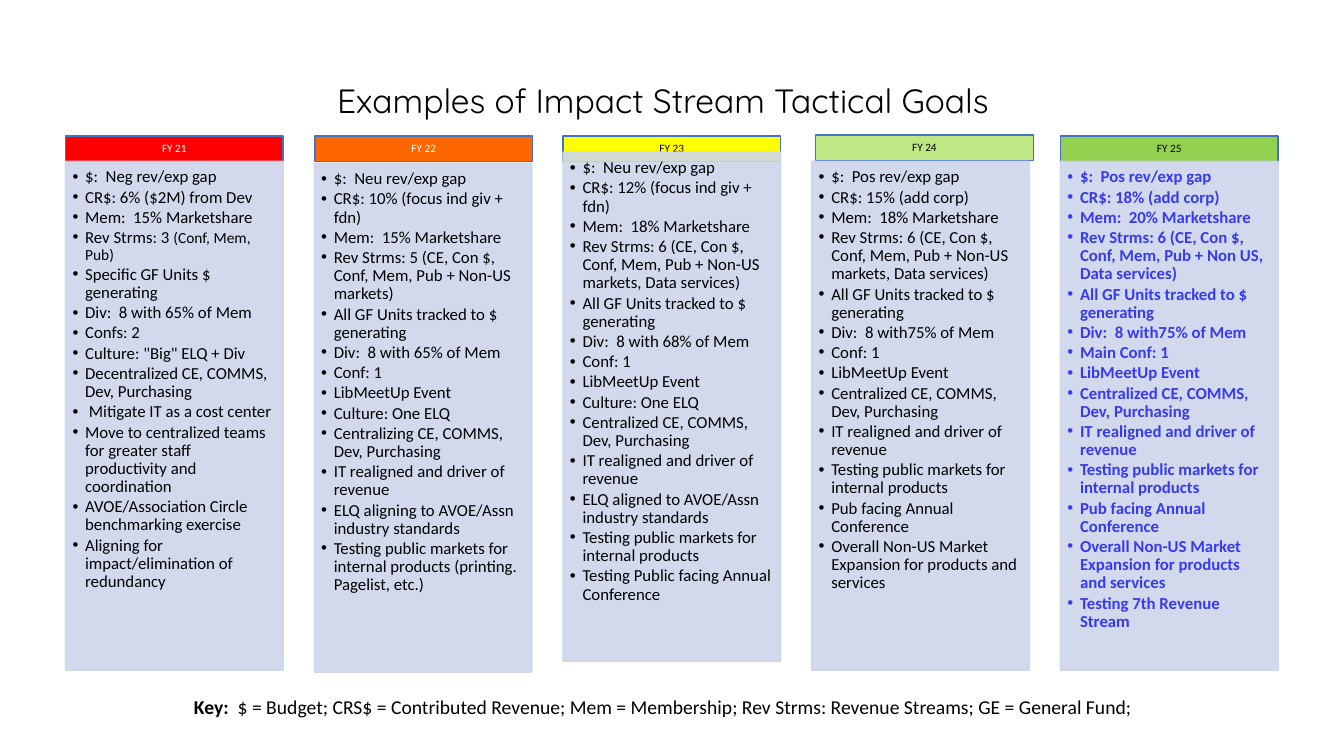
import copy
from pptx import Presentation
from pptx import util as u
from pptx.dml import color
from pptx.enum import shapes, text
from pptx.oxml import ns, xmlchemy

YEARS = [
    ("FY 21", "FF0000", "FFFFFF", 0, 97.2, 115.2, "000000", False, [
        "$:  Neg rev/exp gap", "CR$: 6% ($2M) from Dev", "Mem:  15% Marketshare",
        "Rev Strms: 3 |(Conf, Mem, Pub)", "Specific GF Units $ generating",
        "Div:  8 with 65% of Mem", "Confs: 2", 'Culture: "Big" ELQ + Div',
        "Decentralized CE, COMMS, Dev, Purchasing", " Mitigate IT as a cost center",
        "Move to centralized teams for greater staff productivity and coordination",
        "AVOE/Association Circle benchmarking exercise",
        "Aligning for impact/elimination of redundancy"]),
    ("FY 22", "FF6600", "FFFFFF", 0.5, 97.2, 116.6, "000000", False, [
        "$:  Neu rev/exp gap", "CR$: 10% (focus ind giv + fdn)", "Mem:  15% Marketshare",
        "Rev Strms: 5 (CE, Con $, Conf, Mem, Pub + Non-US markets)",
        "All GF Units tracked to $ generating", "Div:  8 with 65% of Mem", "Conf: 1",
        "LibMeetUp Event", "Culture: One ELQ", "Centralizing CE, COMMS, Dev, Purchasing",
        "IT realigned and driver of revenue", "ELQ aligning to AVOE/Assn industry standards",
        "Testing public markets for internal products (printing. Pagelist, etc.)"]),
    ("FY 23", "FFFF00", "000000", 0, 97.2, 108.7, "000000", False, [
        "$:  Neu rev/exp gap", "CR$: 12% (focus ind giv + fdn)", "Mem:  18% Marketshare",
        "Rev Strms: 6 (CE, Con $, Conf, Mem, Pub + Non-US markets, Data services)",
        "All GF Units tracked to $ generating", "Div:  8 with 68% of Mem", "Conf: 1",
        "LibMeetUp Event", "Culture: One ELQ", "Centralized CE, COMMS, Dev, Purchasing",
        "IT realigned and driver of revenue", "ELQ aligned to AVOE/Assn industry standards",
        "Testing public markets for internal products",
        "Testing Public facing Annual Conference"]),
    ("FY 24", "BFE785", "000000", 2.8, 96.5, 115.2, "000000", False, [
        "$:  Pos rev/exp gap", "CR$: 15% (add corp)", "Mem:  18% Marketshare",
        "Rev Strms: 6 (CE, Con $, Conf, Mem, Pub + Non-US markets, Data services)",
        "All GF Units tracked to $ generating", "Div:  8 with75% of Mem", "Conf: 1",
        "LibMeetUp Event", "Centralized CE, COMMS, Dev, Purchasing",
        "IT realigned and driver of revenue", "Testing public markets for internal products",
        "Pub facing Annual Conference",
        "Overall Non-US Market Expansion for products and services"]),
    ("FY 25", "92D050", "000000", 0, 97.2, 115.2, "373BED", True, [
        "$:  Pos rev/exp gap", "CR$: 18% (add corp)", "Mem:  20% Marketshare",
        "Rev Strms: 6 (CE, Con $, Conf, Mem, Pub + Non US, Data services)",
        "All GF Units tracked to $ generating", "Div:  8 with75% of Mem", "Main Conf: 1",
        "LibMeetUp Event", "Centralized CE, COMMS, Dev, Purchasing",
        "IT realigned and driver of revenue", "Testing public markets for internal products",
        "Pub facing Annual Conference",
        "Overall Non-US Market Expansion for products and services",
        "Testing 7th Revenue Stream"]),
]
KEY = ("$ = Budget; CRS$ = Contributed Revenue; Mem = Membership; "
       "Rev Strms: Revenue Streams; GE = General Fund;")


def rgb(hex_string):
    return color.RGBColor.from_string(hex_string)


class GoalsSlide:
    body_font = "Calibri"
    title_font = "Quicksand"
    black = "000000"
    panel_color = "CFD5EA"
    header_line = "4472C4"

    def __init__(self, presentation):
        self.slide = presentation.slides.add_slide(presentation.slide_layouts[1])
        self.body = self.slide.placeholders[1]

    def place(self, shape, left, top, width, height):
        shape.left, shape.top = u.Pt(left), u.Pt(top)
        shape.width, shape.height = u.Pt(width), u.Pt(height)

    def frame(self, shape, margins, anchor):
        frame = shape.text_frame
        frame.word_wrap = True
        frame.auto_size = text.MSO_AUTO_SIZE.NONE
        frame.vertical_anchor = anchor
        (frame.margin_left, frame.margin_top,
         frame.margin_right, frame.margin_bottom) = map(u.Pt, margins)
        return frame

    def font(self, run, size, hex_string, name=body_font, bold=False):
        run.font.size, run.font.name, run.font.bold = u.Pt(size), name, bold
        run.font.color.rgb = rgb(hex_string)

    def paint(self, shape, fill, line, alpha=None):
        shape.fill.solid()
        shape.fill.fore_color.rgb = rgb(fill)
        shape.line.color.rgb = rgb(line)
        shape.line.width = u.Pt(1)
        if alpha:
            for tone in shape.element.spPr.iter(ns.qn("a:srgbClr")):
                opacity = xmlchemy.OxmlElement("a:alpha")
                opacity.set("val", str(alpha * 1000))
                tone.append(opacity)

    def title(self, words, *box):
        shape = self.slide.shapes.title
        self.place(shape, *box)
        frame = self.frame(shape, (7.2, 3.6, 7.2, 3.6), text.MSO_ANCHOR.TOP)
        frame.text = words
        frame.paragraphs[0].alignment = text.PP_ALIGN.CENTER
        self.font(frame.paragraphs[0].runs[0], 24, self.black, self.title_font)

    def header(self, words, fill, ink, *box):
        shape = self.slide.shapes.add_shape(shapes.MSO_SHAPE.RECTANGLE, *map(u.Pt, box))
        shape.shadow.inherit = False
        self.paint(shape, fill, self.header_line)
        frame = self.frame(shape, (4.3, 2.9, 4.3, 2.9), text.MSO_ANCHOR.MIDDLE)
        frame.text = words
        paragraph = frame.paragraphs[0]
        paragraph.alignment = text.PP_ALIGN.CENTER
        paragraph.line_spacing = 0.9
        self.font(paragraph.runs[0], 8, ink)

    def goals(self, items, ink, bold, *box):
        element = copy.deepcopy(self.body.element)
        new_id = max(shape.shape_id for shape in self.slide.shapes) + 1
        element.nvSpPr.cNvPr.set("id", str(new_id))
        self.slide.shapes._spTree.append(element)
        shape = self.slide.shapes[-1]
        shape.name = f"Goals {new_id}"
        self.place(shape, *box)
        self.paint(shape, self.panel_color, self.panel_color, 90)
        frame = self.frame(shape, (5, 5, 6.5, 7.2), text.MSO_ANCHOR.TOP)
        frame.text = "\n".join(items)
        for paragraph in frame.paragraphs:
            paragraph.line_spacing = 0.9
            paragraph.space_before, paragraph.space_after = u.Pt(0), u.Pt(1.5)
            properties = paragraph._p.get_or_add_pPr()
            properties.set("marL", str(u.Pt(9)))
            properties.set("indent", str(u.Pt(-9)))
            main, _, detail = paragraph.text.partition("|")
            paragraph.text = main
            self.font(paragraph.runs[0], 12, ink, bold=bold)
            if detail:
                run = paragraph.add_run()
                run.text = detail
                self.font(run, 11, ink, bold=bold)

    def key(self, label, words, *box):
        shape = self.slide.shapes.add_textbox(*map(u.Pt, box))
        frame = self.frame(shape, (7.2, 3.6, 7.2, 3.6), text.MSO_ANCHOR.TOP)
        paragraph = frame.paragraphs[0]
        paragraph.alignment = text.PP_ALIGN.CENTER
        for part, bold in ((label, True), (words, False)):
            run = paragraph.add_run()
            run.text = part
            self.font(run, 14, self.black, bold=bold)

    def finish(self):
        self.body.element.getparent().remove(self.body.element)


def main():
    presentation = Presentation()
    presentation.slide_width, presentation.slide_height = u.Pt(960), u.Pt(540)
    goals_slide = GoalsSlide(presentation)
    goals_slide.title("Examples of Impact Stream Tactical Goals", 26, 53.3, 895, 36)
    left, pitch, width = 46.8, 177.66, 155.5
    for index, (year, fill, ink, shift, top, panel_top, color_hex, bold, items) in enumerate(YEARS):
        column = left + index * pitch
        goals_slide.header(year, fill, ink, column + shift, top, width, 18)
        goals_slide.goals(items, color_hex, bold, column, panel_top, width, 363.6)
    goals_slide.key("Key:  ", KEY, 103, 492.5, 741.6, 24.5)
    goals_slide.finish()
    presentation.save("out.pptx")


if __name__ == "__main__":
    main()
